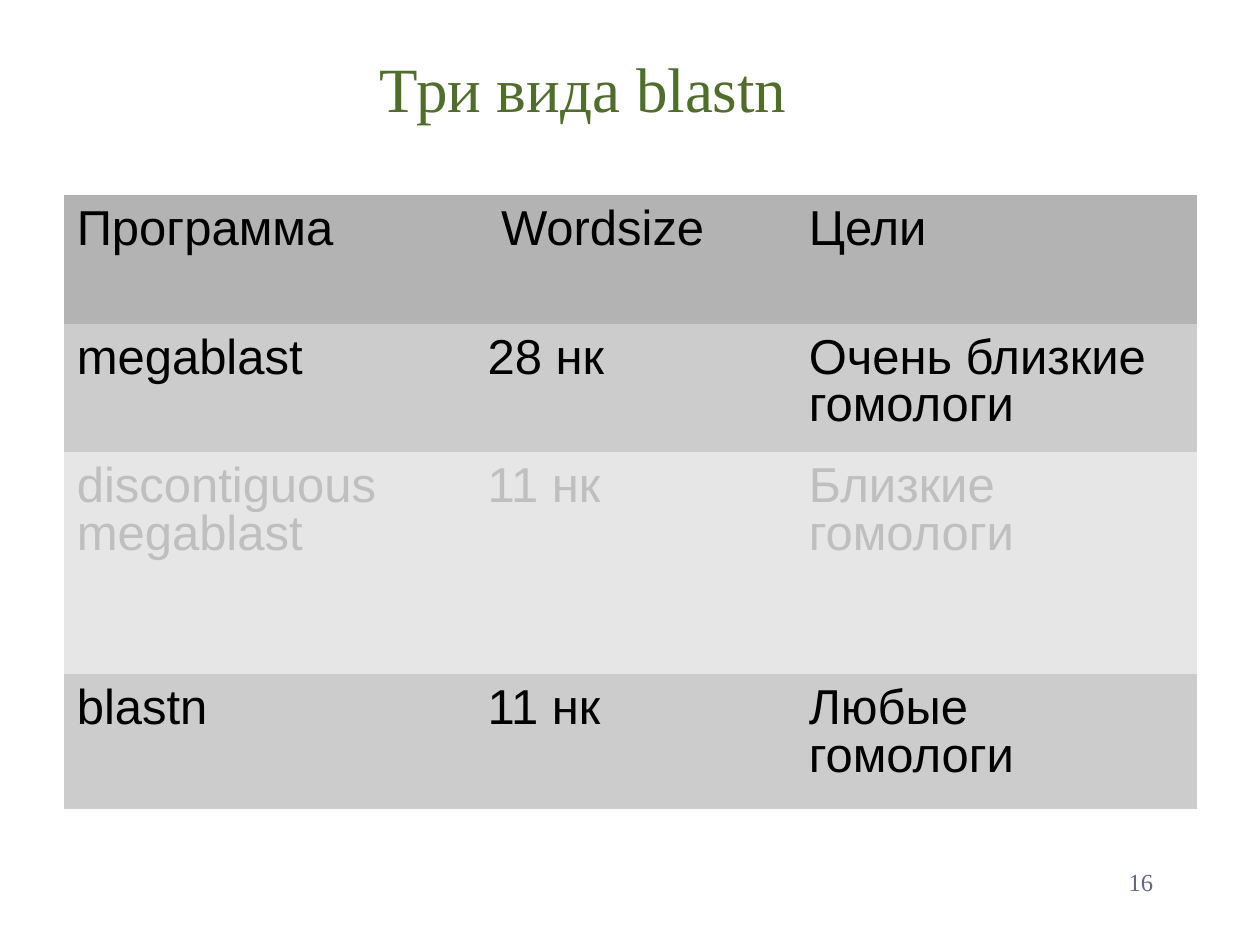
from pptx import Presentation
from pptx.dml.color import RGBColor
from pptx.enum.text import MSO_ANCHOR, PP_ALIGN
from pptx.oxml.ns import qn
from pptx.util import Pt

MIDDLE, TOP = MSO_ANCHOR.MIDDLE, MSO_ANCHOR.TOP
CENTER, LEFT, RIGHT = PP_ALIGN.CENTER, PP_ALIGN.LEFT, PP_ALIGN.RIGHT
SERIF, SANS = "Times New Roman", "Arial"
PLAIN = "{2D5ABB26-0587-4C30-8999-92F81FD0307C}"
COLORS = {"title": "506D2D", "page": "61698B", "ink": "000000", "faint": "BFBFBF",
          "head": "B3B3B3", "band": "CCCCCC", "pale": "E6E6E6"}
COLS = (234.72, 183.6, 228.96)
ROWS = (
    (73.44, "head", "ink", ("Программа", " Wordsize", "Цели")),
    (73.44, "band", "ink", ("megablast", "28 нк", "Очень близкие гомологи")),
    (126.72, "pale", "faint", ("discontiguous megablast", "11 нк", "Близкие гомологи")),
    (77.04, "band", "ink", ("blastn", "11 нк", "Любые гомологи")),
)


def apply(item, values):
    """Set each named attribute on the item."""
    for name, value in values.items():
        setattr(item, name, value)


def place(shape, left, top, width, height):
    """Move and size a shape in points."""
    apply(shape, {"left": Pt(left), "top": Pt(top),
                  "width": Pt(width), "height": Pt(height)})


def write(frame, text, face, size, color, align, space=1.0):
    """Fill a text frame with one formatted paragraph."""
    frame.text = text
    para = frame.paragraphs[0]
    apply(para, {"alignment": align, "line_spacing": space})
    font = para.runs[0].font
    apply(font, {"name": face, "size": Pt(size), "bold": False})
    font.color.rgb = RGBColor.from_string(COLORS[color])


def add_title(slide, text):
    """Place and fill the title."""
    title = slide.shapes.title
    place(title, 14.4, 17.28, 637.92, 65.52)
    frame = title.text_frame
    apply(frame, {"word_wrap": True, "vertical_anchor": MIDDLE, "margin_left": 0,
                  "margin_right": 0, "margin_top": 0, "margin_bottom": 0})
    write(frame, text, SERIF, 36, "title", CENTER)


def add_grid(slide):
    """Build the table of programs."""
    height = sum(row[0] for row in ROWS)
    frame = slide.shapes.add_table(len(ROWS), len(COLS), Pt(36.72), Pt(111.6),
                                   Pt(sum(COLS)), Pt(height))
    for style in frame.element.iter(qn("a:tableStyleId")):
        style.text = PLAIN
    table = frame.table
    apply(table, {"first_row": False, "horz_banding": False})
    for col, width in zip(table.columns, COLS):
        col.width = Pt(width)
    for row, (high, fill, ink, texts) in zip(table.rows, ROWS):
        row.height = Pt(high)
        for cell, text in zip(row.cells, texts):
            apply(cell, {"margin_left": Pt(7.2), "margin_right": Pt(7.2),
                         "margin_top": Pt(7.2), "margin_bottom": Pt(3.6),
                         "vertical_anchor": TOP})
            cell.fill.solid()
            cell.fill.fore_color.rgb = RGBColor.from_string(COLORS[fill])
            write(cell.text_frame, text, SANS, 28, ink, LEFT, 0.87)


def add_page(slide, text):
    """Add the page number."""
    frame = slide.shapes.add_textbox(Pt(516.24), Pt(491.76), Pt(149.76), Pt(36)).text_frame
    frame.word_wrap = True
    write(frame, text, SERIF, 14, "page", RIGHT)


def main():
    """Build and save the slide."""
    deck = Presentation()
    apply(deck, {"slide_width": Pt(720), "slide_height": Pt(540)})
    slide = deck.slides.add_slide(deck.slide_layouts.get_by_name("Title Only"))
    add_title(slide, "Три вида blastn")
    add_grid(slide)
    add_page(slide, "16")
    deck.save("out.pptx")


if __name__ == "__main__":
    main()
